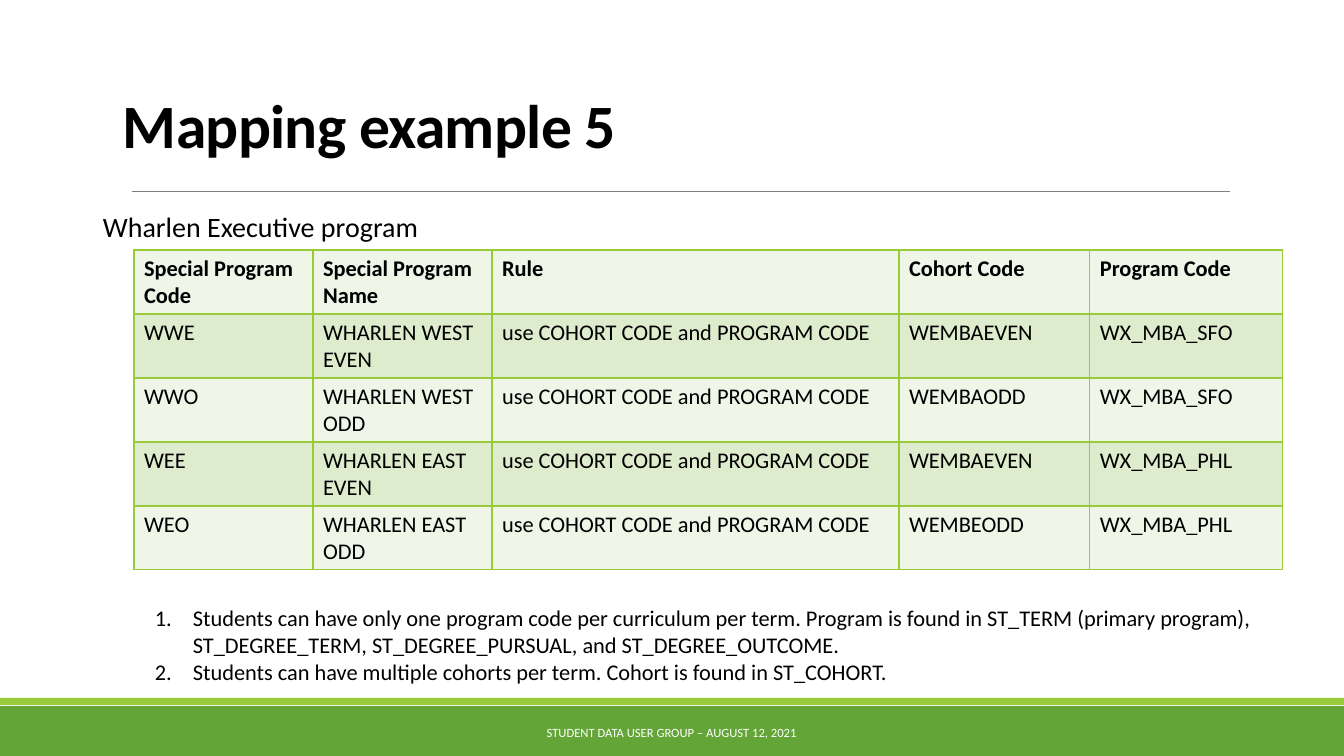
from lxml import etree
from pptx import Presentation
from pptx.dml.color import RGBColor
from pptx.enum.shapes import MSO_CONNECTOR, MSO_SHAPE
from pptx.enum.text import MSO_ANCHOR, PP_ALIGN
from pptx.oxml.ns import qn
from pptx.util import Pt

RECT, STRAIGHT = MSO_SHAPE.RECTANGLE, MSO_CONNECTOR.STRAIGHT
TOP, MIDDLE, BOTTOM = MSO_ANCHOR.TOP, MSO_ANCHOR.MIDDLE, MSO_ANCHOR.BOTTOM
LEFT, CENTER = PP_ALIGN.LEFT, PP_ALIGN.CENTER

TITLE = "Mapping example 5"
SUBTITLE = "Wharlen Executive program"
FOOTER = "STUDENT DATA USER GROUP – AUGUST 12, 2021"
RULE = "use COHORT CODE and PROGRAM CODE"
ROWS = [
    ("Special Program Code", "Special Program Name", "Rule", "Cohort Code", "Program Code"),
    ("WWE", "WHARLEN WEST EVEN", RULE, "WEMBAEVEN", "WX_MBA_SFO"),
    ("WWO", "WHARLEN WEST ODD", RULE, "WEMBAODD", "WX_MBA_SFO"),
    ("WEE", "WHARLEN EAST EVEN", RULE, "WEMBAEVEN", "WX_MBA_PHL"),
    ("WEO", "WHARLEN EAST ODD", RULE, "WEMBEODD", "WX_MBA_PHL"),
]
NOTES = [
    "Students can have only one program code per curriculum per term. Program is found in "
    "ST_TERM (primary program), ST_DEGREE_TERM, ST_DEGREE_PURSUAL, and ST_DEGREE_OUTCOME.",
    "Students can have multiple cohorts per term. Cohort is found in ST_COHORT.",
]

FONT = "Calibri"
BLACK, WHITE, GREY = "000000", "FFFFFF", "808080"
GREEN, LIME = "63A537", "99CB38"
ROW_FILLS = ("EFF6E8", "DEECCE")
WIDTH, HEIGHT = 1344, 756
TABLE_LEFT, TABLE_TOP, ROW_HEIGHT = 134, 250, 64
COL_WIDTHS = (179, 179, 407, 191, 193)
NOTE_INDENT = 38


def px(n):
    return round(n * 914400 / 100.8)


def rgb(color):
    return RGBColor.from_string(color)


def style(p, size, color=BLACK, bold=False):
    p.font.name, p.font.size, p.font.bold = FONT, Pt(size), bold
    p.font.color.rgb = rgb(color)


def add_band(slide, top, height, color):
    sp = slide.shapes.add_shape(RECT, 0, px(top), px(WIDTH), px(height))
    sp.shadow.inherit = False
    sp.fill.solid()
    sp.fill.fore_color.rgb = rgb(color)
    sp.line.fill.background()


def add_text(slide, box, lines, size, color=BLACK, bold=False, anchor=TOP, align=LEFT):
    tf = slide.shapes.add_textbox(*map(px, box)).text_frame
    tf.word_wrap, tf.vertical_anchor = True, anchor
    tf.text = "\n".join(lines)
    for p in tf.paragraphs:
        p.alignment = align
        style(p, size, color, bold)
    return tf


def add_numbering(p):
    pPr = p._p.get_or_add_pPr()
    pPr.set("marL", str(px(NOTE_INDENT)))
    pPr.set("indent", str(-px(NOTE_INDENT)))
    number = etree.Element(qn("a:buAutoNum"), type="arabicPeriod")
    pPr.insert_element_before(number, "a:tabLst", "a:defRPr", "a:extLst")


def add_borders(cell):
    """Draw the four cell borders; they must precede the fill."""
    tcPr = cell._tc.get_or_add_tcPr()
    for i, side in enumerate(("lnL", "lnR", "lnT", "lnB")):
        ln = etree.Element(qn(f"a:{side}"), w=str(Pt(1)))
        fill = etree.SubElement(ln, qn("a:solidFill"))
        etree.SubElement(fill, qn("a:srgbClr"), val=LIME)
        tcPr.insert(i, ln)


def add_program_table(slide):
    table = slide.shapes.add_table(
        len(ROWS), len(COL_WIDTHS), px(TABLE_LEFT), px(TABLE_TOP),
        px(sum(COL_WIDTHS)), px(ROW_HEIGHT * len(ROWS))).table
    for column, width in zip(table.columns, COL_WIDTHS):
        column.width = px(width)
    for r, row in enumerate(ROWS):
        for c, text in enumerate(row):
            cell = table.cell(r, c)
            cell.text = text
            style(cell.text_frame.paragraphs[0], 16, bold=r == 0)
            cell.fill.solid()
            cell.fill.fore_color.rgb = rgb(ROW_FILLS[r % 2])
            add_borders(cell)


def main():
    prs = Presentation()
    prs.slide_width, prs.slide_height = px(WIDTH), px(HEIGHT)
    slide = prs.slides.add_slide(prs.slide_layouts[6])

    add_band(slide, 706, 50, GREEN)
    add_band(slide, 698, 7, LIME)
    divider = slide.shapes.add_connector(STRAIGHT, px(132), px(191), px(1230), px(191))
    divider.line.color.rgb, divider.line.width = rgb(GREY), Pt(0.5)
    etree.SubElement(divider._element.spPr, qn("a:effectLst"))

    add_text(slide, (406, 713, 531, 40), [FOOTER], 9, WHITE, anchor=MIDDLE, align=CENTER)
    title = add_text(slide, (113, 95, 1240, 71), [TITLE], 44, bold=True, anchor=BOTTOM).paragraphs[0]
    title.line_spacing = 0.85
    title.runs[0].font._element.set("spc", "-50")
    add_text(slide, (93, 205, 676, 44), [SUBTITLE], 20)
    for p in add_text(slide, (145, 599, 1138, 92), NOTES, 16).paragraphs:
        add_numbering(p)
    add_program_table(slide)

    prs.save("out.pptx")


if __name__ == "__main__":
    main()
